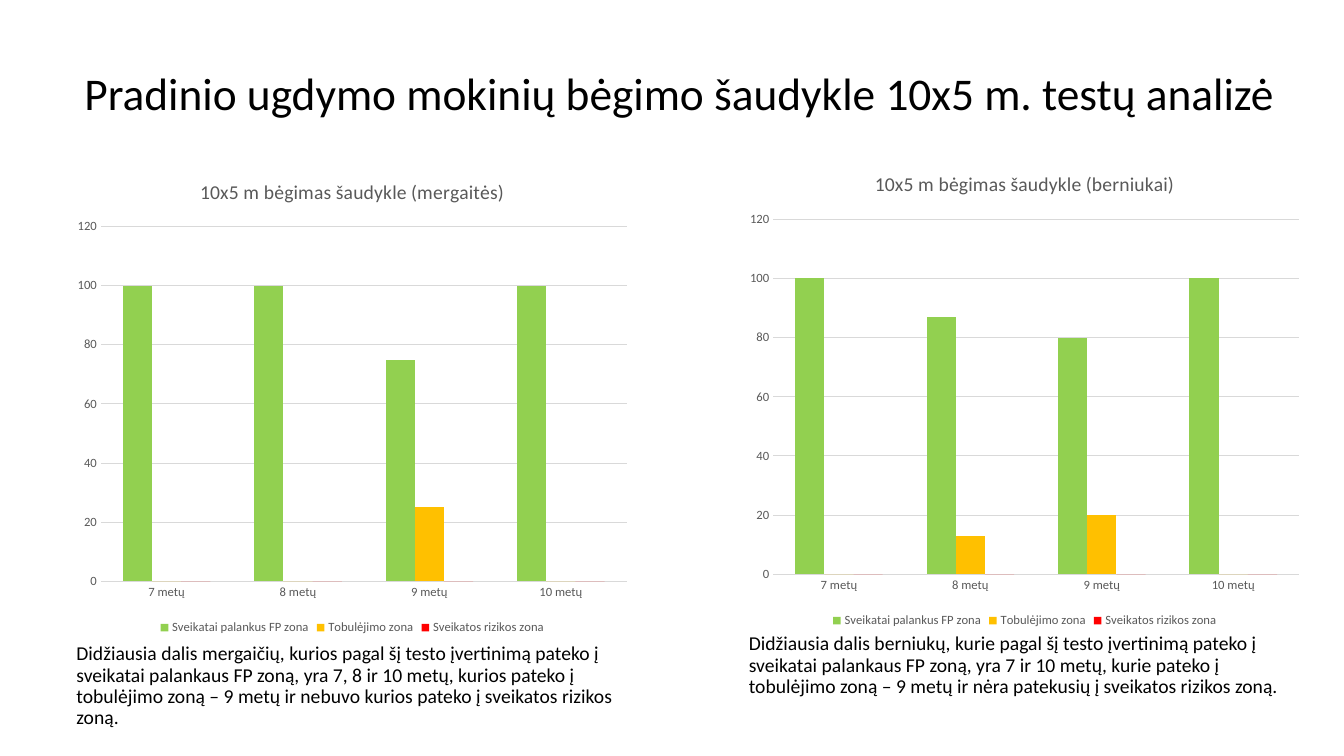
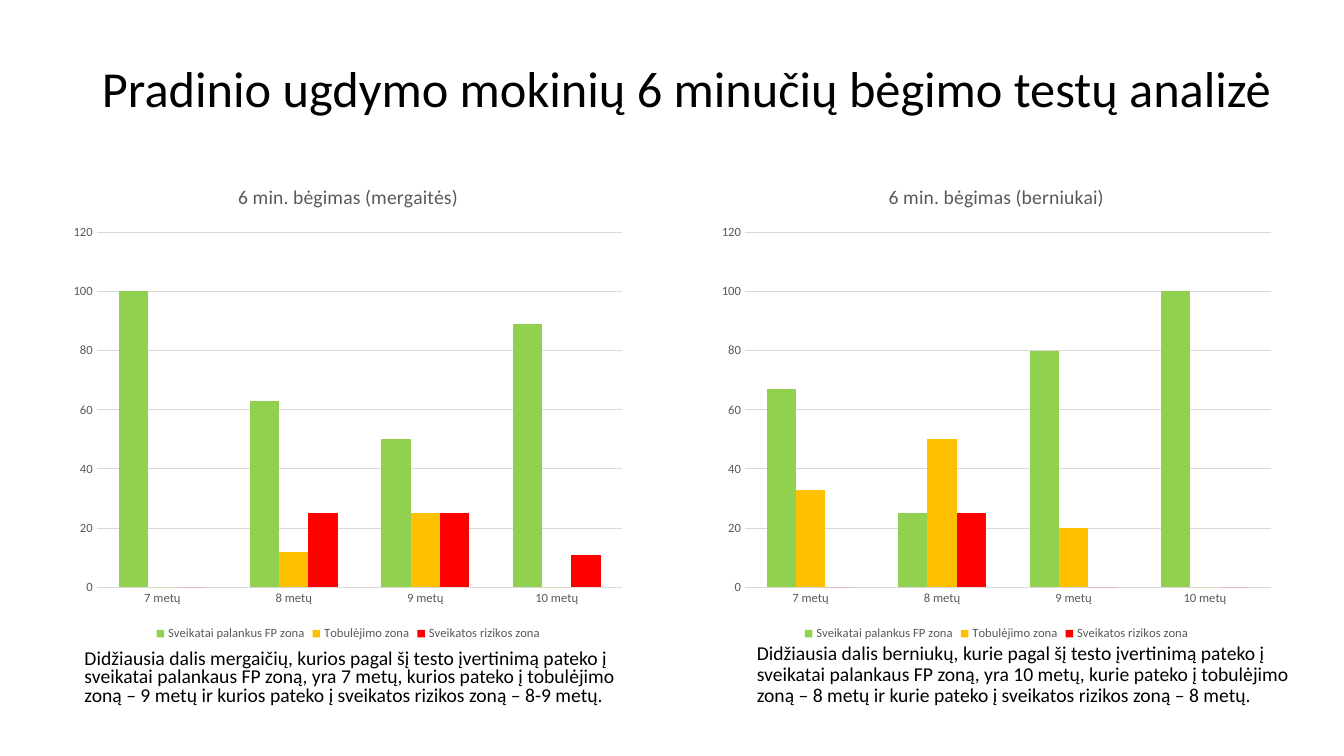
from dataclasses import dataclass

from lxml import etree
from pptx import Presentation
from pptx.chart.chart import Chart
from pptx.chart.data import CategoryChartData
from pptx.dml.color import RGBColor
from pptx.enum.chart import XL_CHART_TYPE, XL_LEGEND_POSITION, XL_TICK_MARK
from pptx.enum.text import MSO_ANCHOR, PP_ALIGN
from pptx.oxml.ns import qn
from pptx.slide import Slide
from pptx.text.text import Font, TextFrame
from pptx.util import Pt

COLUMN = XL_CHART_TYPE.COLUMN_CLUSTERED
BOTTOM = XL_LEGEND_POSITION.BOTTOM
NO_TICK = XL_TICK_MARK.NONE
MIDDLE = MSO_ANCHOR.MIDDLE
LEFT, CENTER = PP_ALIGN.LEFT, PP_ALIGN.CENTER

FONT = "Calibri"
COLORS = {
    "text": "000000",
    "label": "595959",
    "grid": "D9D9D9",
    "healthy": "92D050",
    "improve": "FFC000",
    "risk": "FF0000",
}
ZONES = {
    "healthy": "Sveikatai palankus FP zona",
    "improve": "Tobulėjimo zona",
    "risk": "Sveikatos rizikos zona",
}
AGES = [f"{age} metų" for age in range(7, 11)]
PANEL_W, CHART_H = 408.24, 342.72
PLOT = {"x": 0.06, "y": 0.14, "w": 0.92, "h": 0.74}


@dataclass(frozen=True)
class Panel:
    title: str
    chart_at: tuple[float, float]
    values: tuple[tuple[int, ...], ...]
    note: str
    note_at: tuple[float, float, float]
    spacing: float = 0.9


@dataclass(frozen=True)
class Page:
    title: str
    title_box: tuple[float, float, float, float]
    title_size: float
    panels: tuple[Panel, ...]


PAGES = (
    Page(
        "Pradinio ugdymo mokinių bėgimo šaudykle 10x5 m. testų analizė",
        (24.5, 28.8, 921.6, 80), 32.4,
        (
            Panel(
                "10x5 m bėgimas šaudykle (mergaitės)", (47.5, 113.8),
                ((100, 100, 75, 100), (0, 0, 25, 0), (0, 0, 0, 0)),
                "Didžiausia dalis mergaičių, kurios pagal šį testo įvertinimą pateko į "
                "sveikatai palankaus FP zoną, yra 7, 8 ir 10 metų, kurios pateko į "
                "tobulėjimo zoną – 9 metų ir nebuvo kurios pateko į sveikatos rizikos zoną.",
                (47.5, 456.5, 74),
            ),
            Panel(
                "10x5 m bėgimas šaudykle (berniukai)", (527.8, 108.7),
                ((100, 87, 80, 100), (0, 13, 20, 0), (0, 0, 0, 0)),
                "Didžiausia dalis berniukų, kurie pagal šį testo įvertinimą pateko į "
                "sveikatai palankaus FP zoną, yra 7 ir 10 metų, kurie pateko į "
                "tobulėjimo zoną – 9 metų ir nėra patekusių į sveikatos rizikos zoną.",
                (527.8, 449.3, 58),
            ),
        ),
    ),
    Page(
        "Pradinio ugdymo mokinių 6 minučių bėgimo testų analizė",
        (53.3, 26.6, 874.8, 77.8), 36,
        (
            Panel(
                "6 min. bėgimas (mergaitės)", (44.6, 118),
                ((100, 63, 50, 89), (0, 12, 25, 0), (0, 25, 25, 11)),
                "Didžiausia dalis mergaičių, kurios pagal šį testo įvertinimą pateko į "
                "sveikatai palankaus FP zoną, yra 7 metų, kurios pateko į tobulėjimo "
                "zoną – 9 metų ir kurios pateko į sveikatos rizikos zoną – 8-9 metų.",
                (53.3, 460.8, 53), 0.8,
            ),
            Panel(
                "6 min. bėgimas (berniukai)", (507.6, 118),
                ((67, 25, 80, 100), (33, 50, 20, 0), (0, 25, 0, 0)),
                "Didžiausia dalis berniukų, kurie pagal šį testo įvertinimą pateko į "
                "sveikatai palankaus FP zoną, yra 10 metų, kurie pateko į tobulėjimo "
                "zoną – 8 metų ir kurie pateko į sveikatos rizikos zoną – 8 metų.",
                (533.5, 455.8, 55),
            ),
        ),
    ),
)


def rgb(name: str) -> RGBColor:
    return RGBColor.from_string(COLORS[name])


def style_font(font: Font, size: float, color: str) -> None:
    font.name = FONT
    font.size = Pt(size)
    font.bold = False
    font.color.rgb = rgb(color)


def write(tf: TextFrame, text: str, size: float, color: str,
          align: PP_ALIGN, spacing: float) -> None:
    p = tf.paragraphs[0]
    p.alignment = align
    p.line_spacing = spacing
    r = p.add_run()
    r.text = text
    style_font(r.font, size, color)


def fix_plot_layout(chart: Chart) -> None:
    area = chart.element.find(".//" + qn("c:plotArea"))
    layout = area.find(qn("c:layout"))
    if layout is None:
        layout = etree.Element(qn("c:layout"))
        area.insert(0, layout)
    manual = etree.SubElement(layout, qn("c:manualLayout"))
    settings = {"layoutTarget": "inner", "xMode": "edge", "yMode": "edge", **PLOT}
    for tag, val in settings.items():
        etree.SubElement(manual, qn(f"c:{tag}")).set("val", str(val))


def add_chart(s: Slide, panel: Panel) -> None:
    data = CategoryChartData()
    data.categories = AGES
    for name, vals in zip(ZONES.values(), panel.values):
        data.add_series(name, vals)
    x, y = panel.chart_at
    chart = s.shapes.add_chart(
        COLUMN, Pt(x), Pt(y), Pt(PANEL_W), Pt(CHART_H), data).chart
    style_font(chart.font, 10, "text")

    chart.has_title = True
    write(chart.chart_title.text_frame, panel.title, 14, "label", CENTER, 1.0)
    chart.chart_title.include_in_layout = False
    chart.has_legend = True
    chart.legend.position = BOTTOM
    chart.legend.include_in_layout = False
    style_font(chart.legend.font, 9, "label")

    for axis in (chart.category_axis, chart.value_axis):
        axis.major_tick_mark = axis.minor_tick_mark = NO_TICK
        axis.format.line.fill.background()
        style_font(axis.tick_labels.font, 9, "label")
    axis = chart.value_axis
    axis.minimum_scale, axis.maximum_scale, axis.major_unit = 0, 120, 20
    axis.has_major_gridlines = True
    grid = axis.major_gridlines.format.line
    grid.width = Pt(0.75)
    grid.color.rgb = rgb("grid")

    plot = chart.plots[0]
    plot.gap_width = 150
    plot.overlap = 0
    plot.vary_by_categories = False
    for series, color in zip(plot.series, ZONES):
        series.format.fill.solid()
        series.format.fill.fore_color.rgb = rgb(color)
    fix_plot_layout(chart)


def add_note(s: Slide, panel: Panel) -> None:
    x, y, h = panel.note_at
    tf = s.shapes.add_textbox(Pt(x), Pt(y), Pt(PANEL_W), Pt(h)).text_frame
    tf.word_wrap = True
    write(tf, panel.note, 14, "text", LEFT, panel.spacing)


def add_page(prs: Presentation, page: Page) -> None:
    s = prs.slides.add_slide(prs.slide_layouts.get_by_name("Title Only"))
    sp = s.shapes.title
    sp.left, sp.top, sp.width, sp.height = map(Pt, page.title_box)
    sp.text_frame.vertical_anchor = MIDDLE
    sp.text_frame.word_wrap = True
    write(sp.text_frame, page.title, page.title_size, "text", CENTER, 0.9)
    for panel in page.panels:
        add_chart(s, panel)
        add_note(s, panel)


def main() -> None:
    prs = Presentation()
    prs.slide_width, prs.slide_height = Pt(960), Pt(540)
    for page in PAGES:
        add_page(prs, page)
    prs.save("out.pptx")


if __name__ == "__main__":
    main()
